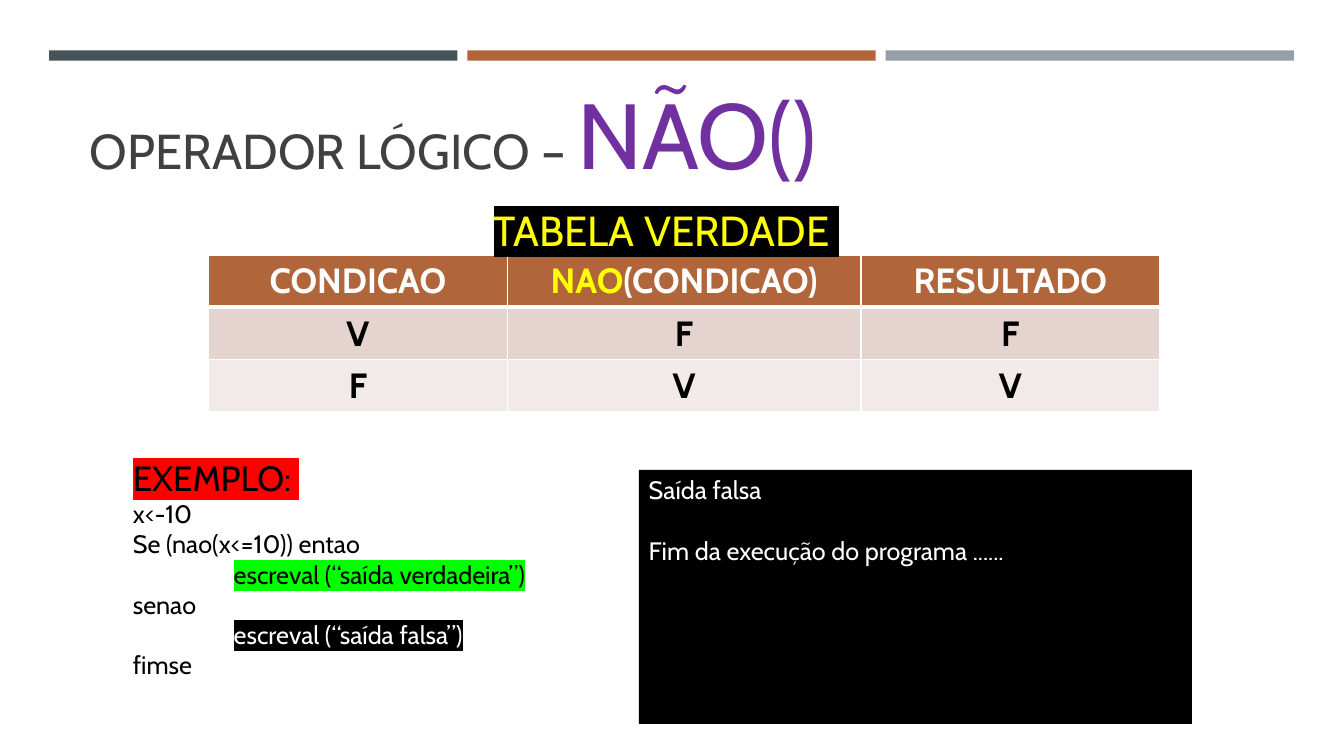
from lxml import etree
from pptx import Presentation
from pptx.dml.color import RGBColor
from pptx.enum import shapes, text
from pptx.oxml import parse_xml
from pptx.oxml.ns import nsdecls, qn
from pptx.util import Cm, Pt

FONT = "Cabin"
WHITE = RGBColor(0xFF, 0xFF, 0xFF)
BLACK = RGBColor(0, 0, 0)
SLATE = RGBColor(0x46, 0x53, 0x59)
RUST = RGBColor(0xB1, 0x65, 0x3B)
SILVER = RGBColor(0x96, 0x9F, 0xA7)
CHARCOAL = RGBColor(0x40, 0x40, 0x40)
PURPLE = RGBColor(0x70, 0x30, 0xA0)
YELLOW = RGBColor(0xFF, 0xFF, 0)
RED = RGBColor(0xFF, 0, 0)
GREEN = RGBColor(0, 0xFF, 0)
ROW_DARK = RGBColor(0xE4, 0xD3, 0xCE)
ROW_LIGHT = RGBColor(0xF2, 0xEA, 0xE8)
LINE_HEIGHT = 1.21


def add_span(para, words, size, color, bold=False, highlight=None, shadow=False):
    span = para.add_run()
    span.text = words
    span.font.size = Pt(size)
    span.font.bold = bold
    span.font.color.rgb = color
    properties = span.font._element
    if shadow:
        properties.append(parse_xml(
            f'<a:effectLst {nsdecls("a")}><a:outerShdw blurRad="38100" dist="38100" '
            'dir="2700000" algn="tl"><a:srgbClr val="000000"><a:alpha val="43000"/>'
            '</a:srgbClr></a:outerShdw></a:effectLst>'))
    if highlight is not None:
        mark = etree.SubElement(properties, qn("a:highlight"))
        etree.SubElement(mark, qn("a:srgbClr"), val=str(highlight))
    span.font.name = FONT


def add_text_box(page, box, wrap=True):
    frame = page.shapes.add_textbox(*box).text_frame
    frame.word_wrap = wrap
    return frame


def add_rectangle(page, box, color):
    rectangle = page.shapes.add_shape(shapes.MSO_SHAPE.RECTANGLE, *box)
    rectangle.shadow.inherit = False
    rectangle.fill.solid()
    rectangle.fill.fore_color.rgb = color
    rectangle.line.fill.background()
    return rectangle


def add_top_bars(page, box):
    left, top, width, height = box
    gap = Cm(0.25)
    colors = (SLATE, RUST, SILVER)
    bar_width = (width - gap * (len(colors) - 1)) // len(colors)
    for index, color in enumerate(colors):
        add_rectangle(page, (left + index * (bar_width + gap), top, bar_width, height), color)


def add_title(page, box):
    frame = add_text_box(page, box, wrap=False)
    frame.vertical_anchor = text.MSO_ANCHOR.BOTTOM
    para = frame.paragraphs[0]
    para.alignment = text.PP_ALIGN.CENTER
    add_span(para, "OPERADOR LÓGICO – ", 35, CHARCOAL, shadow=True)
    add_span(para, "NÃO()", 66, PURPLE, shadow=True)


def add_table_label(page, box):
    para = add_text_box(page, box).paragraphs[0]
    add_span(para, "TABELA VERDADE ", 30, YELLOW, highlight=BLACK)


def style_cell(cell, color, bottom_width):
    """Give the cell white borders and a solid fill."""
    properties = cell._tc.get_or_add_tcPr()
    for side, width in (("L", 1), ("R", 1), ("T", 1), ("B", bottom_width)):
        properties.append(parse_xml(
            f'<a:ln{side} {nsdecls("a")} w="{Pt(width)}"><a:solidFill>'
            f'<a:srgbClr val="{WHITE}"/></a:solidFill></a:ln{side}>'))
    cell.fill.solid()
    cell.fill.fore_color.rgb = color


def add_truth_table(page, box):
    rows = (
        (RUST, WHITE, ("CONDICAO", "NAO(CONDICAO)", "RESULTADO")),
        (ROW_DARK, BLACK, ("V", "F", "F")),
        (ROW_LIGHT, BLACK, ("F", "V", "V")),
    )
    left, top, width, height = box
    table = page.shapes.add_table(len(rows), 3, left, top, width, height).table
    middle = Cm(8.92)
    side = (width - middle) // 2
    for column, column_width in zip(table.columns, (side, middle, side)):
        column.width = column_width
    for row_index, (fill, color, words) in enumerate(rows):
        for column_index, word in enumerate(words):
            cell = table.cell(row_index, column_index)
            style_cell(cell, fill, 3 if row_index == 0 else 1)
            para = cell.text_frame.paragraphs[0]
            para.alignment = text.PP_ALIGN.CENTER
            if word.startswith("NAO"):
                add_span(para, "NAO", 25, YELLOW, bold=True)
                word = word.removeprefix("NAO")
            add_span(para, word, 25, color, bold=True)


def add_example(page, box):
    lines = (
        ("EXEMPLO: ", 25, BLACK, RED, False),
        ("x<-10", 18, BLACK, None, False),
        ("Se (nao(x<=10)) entao", 18, BLACK, None, False),
        ("escreval (“saída verdadeira”)", 18, BLACK, GREEN, True),
        ("senao", 18, BLACK, None, False),
        ("escreval (“saída falsa”)", 18, WHITE, BLACK, True),
        ("fimse", 18, BLACK, None, False),
    )
    frame = add_text_box(page, box)
    for index, (words, size, color, highlight, indented) in enumerate(lines):
        para = frame.add_paragraph() if index else frame.paragraphs[0]
        if indented:
            para._p.get_or_add_pPr().set("marL", str(Cm(2.54)))
        add_span(para, words, size, color, highlight=highlight)


def add_output_screen(page, box):
    frame = add_rectangle(page, box, BLACK).text_frame
    frame.word_wrap = True
    frame.vertical_anchor = text.MSO_ANCHOR.TOP
    size = 18
    result = frame.paragraphs[0]
    ending = frame.add_paragraph()
    ending.space_before = Pt(size * LINE_HEIGHT)
    for para, words in ((result, "Saída falsa"), (ending, "Fim da execução do programa ......")):
        para.alignment = text.PP_ALIGN.LEFT
        add_span(para, words, size, WHITE)


def main():
    deck = Presentation()
    deck.slide_width, deck.slide_height = Cm(33.87), Cm(19.05)
    page = deck.slides.add_slide(deck.slide_layouts[6])
    add_top_bars(page, (Cm(1.24), Cm(1.27), Cm(31.37), Cm(0.26)))
    add_title(page, (Cm(1.22), Cm(1.8), Cm(20.42), Cm(3.07)))
    add_truth_table(page, (Cm(5.26), Cm(6.43), Cm(23.96), Cm(3.93)))
    add_example(page, (Cm(3.1), Cm(11.38), Cm(12.12), Cm(5.94)))
    add_output_screen(page, (Cm(16.1), Cm(11.84), Cm(13.94), Cm(6.4)))
    add_table_label(page, (Cm(12.19), Cm(5.03), Cm(12.47), Cm(1.55)))
    deck.save("out.pptx")


if __name__ == "__main__":
    main()
